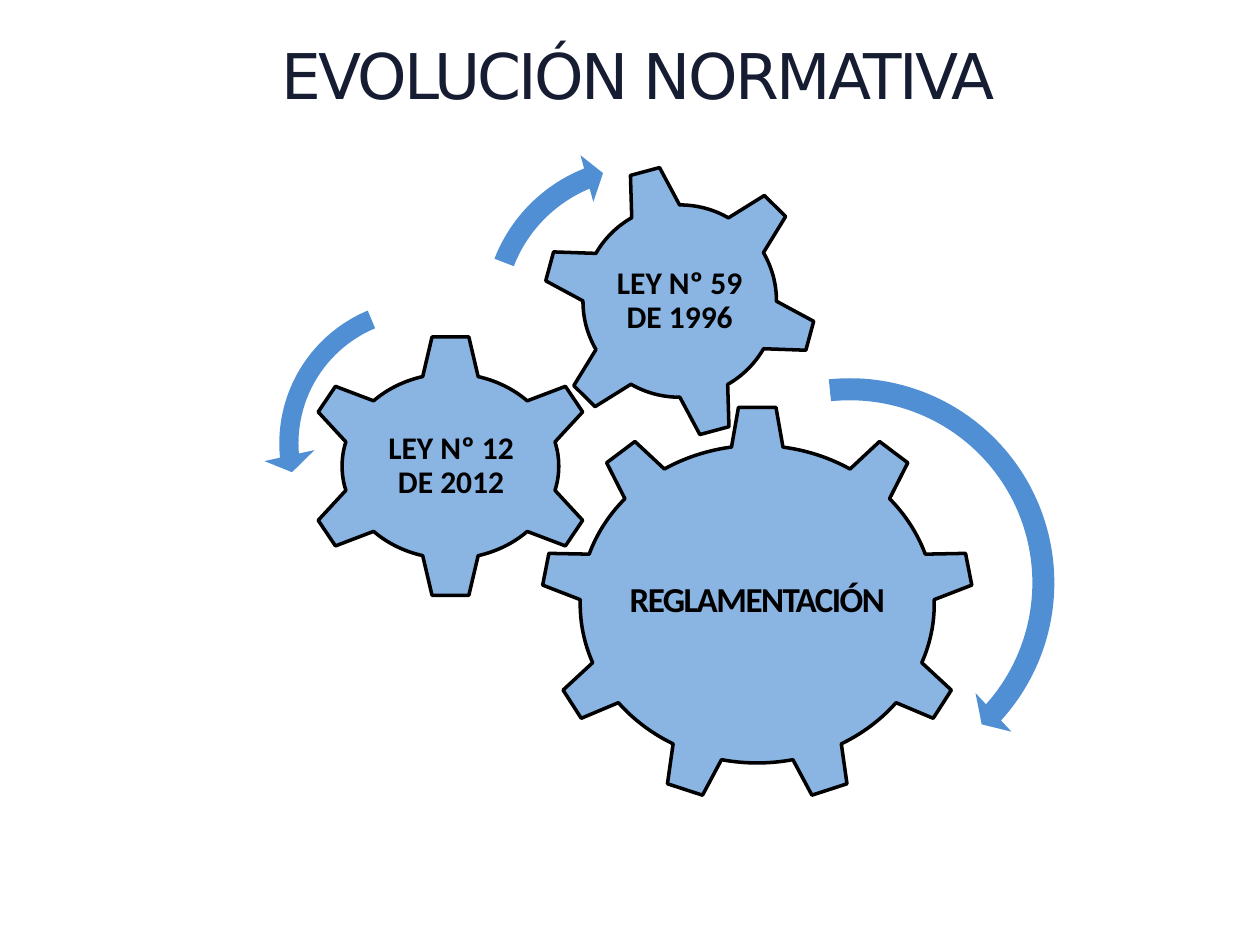
from lxml import etree
from pptx import Presentation
from pptx.dml.color import RGBColor
from pptx.enum.shapes import MSO_SHAPE as SHAPE
from pptx.enum.text import MSO_ANCHOR as ANCHOR, PP_ALIGN as ALIGN
from pptx.oxml.ns import qn
from pptx.util import Inches, Pt

COLORS = {"gear": "8AB4E2", "arrow": "508FD4", "ink": "000000"}
TITLE_GRADIENT = [(0, "2E59B0"), (49, "161D32"), (100, "000000")]


class GearSlide:
    """Holds the style and the current slide."""

    def __init__(self, prs):
        self.slide = prs.slides.add_slide(prs.slide_layouts[6])

    def shape(self, kind, box, color, rotation=0):
        shape = self.slide.shapes.add_shape(kind, *map(Inches, box))
        shape.shadow.inherit = False
        shape.fill.solid()
        shape.fill.fore_color.rgb = RGBColor.from_string(COLORS[color])
        shape.rotation = rotation
        return shape

    def gear(self, kind, box, rotation=0):
        gear = self.shape(kind, box, "gear", rotation)
        gear.line.color.rgb = RGBColor.from_string(COLORS["ink"])
        gear.line.width = Pt(2)

    def arrow(self, kind, box, adjustments, rotation=0):
        arrow = self.shape(kind, box, "arrow", rotation)
        arrow.line.fill.background()
        for i, value in enumerate(adjustments):
            arrow.adjustments[i] = value

    def text(self, words, box, size, font, bold=False, inset=0.03,
             anchor=ANCHOR.MIDDLE, spacing=0, gradient=None):
        frame = self.slide.shapes.add_textbox(*map(Inches, box)).text_frame
        frame.word_wrap = True
        frame.vertical_anchor = anchor
        frame.margin_left = frame.margin_right = Inches(inset)
        frame.margin_top = frame.margin_bottom = Inches(inset)
        paragraph = frame.paragraphs[0]
        paragraph.alignment = ALIGN.CENTER
        paragraph.line_spacing = 0.9
        paragraph.font.size = Pt(size)
        paragraph.font.name = font
        paragraph.font.bold = bold
        paragraph.font.color.rgb = RGBColor.from_string(COLORS["ink"])
        run = paragraph.add_run()
        run.text = words
        props = run._r.get_or_add_rPr()
        if spacing:
            props.set("spc", str(round(spacing * 100)))
        if gradient:
            self.gradient(props, gradient)

    def gradient(self, props, stops):
        fill = etree.SubElement(props, qn("a:gradFill"))
        stop_list = etree.SubElement(fill, qn("a:gsLst"))
        for position, color in stops:
            stop = etree.SubElement(stop_list, qn("a:gs"), pos=str(position * 1000))
            etree.SubElement(stop, qn("a:srgbClr"), val=color)
        etree.SubElement(fill, qn("a:lin"), ang="5400000")


def main():
    prs = Presentation()
    prs.slide_width, prs.slide_height = Inches(10), Inches(7.5)
    page = GearSlide(prs)

    # Title
    page.text("EVOLUCIÓN NORMATIVA", (0.98, 0.36, 8.17, 0.55), 36, "DejaVu Sans",
              inset=0, anchor=ANCHOR.TOP, spacing=-1.5, gradient=TITLE_GRADIENT)

    # Gears with their labels: kind, box, rotation, words, label box, size, spacing
    gears = [
        (SHAPE.GEAR_9, (4.29, 3.22, 3.44, 3.15), 0,
         "REGLAMENTACIÓN", (4.96, 3.96, 2.1, 1.62), 20, -0.9),
        (SHAPE.GEAR_6, (2.4, 2.65, 2.35, 2.1), 0,
         "LEY Nº 12 DE 2012", (2.97, 3.18, 1.22, 1.04), 18, 0),
        (SHAPE.GEAR_6, (4.3, 1.3, 2.19, 2.18), 345,
         "LEY Nº 59 DE 1996", (4.78, 1.78, 1.23, 1.22), 18, 0),
    ]
    for kind, box, rotation, words, label_box, size, spacing in gears:
        page.gear(kind, box, rotation)
        page.text(words, label_box, size, "Calibri", bold=True, spacing=spacing)

    # Turning arrows
    page.arrow(SHAPE.CIRCULAR_ARROW, (5, 2.88, 3.49, 3.49),
               (0.05, 2.99, 25.24, 158.45, 0.06))
    page.arrow(SHAPE.LEFT_CIRCULAR_ARROW, (2.09, 2.25, 2.54, 2.54),
               (0.06, 4.3, 104.89, 148.38, 0.08))
    page.arrow(SHAPE.CIRCULAR_ARROW, (3.73, 1.14, 2.74, 2.74),
               (0.06, 3.94, 133.14, 105.08, 0.07), rotation=26.1)

    prs.save("out.pptx")


if __name__ == "__main__":
    main()
